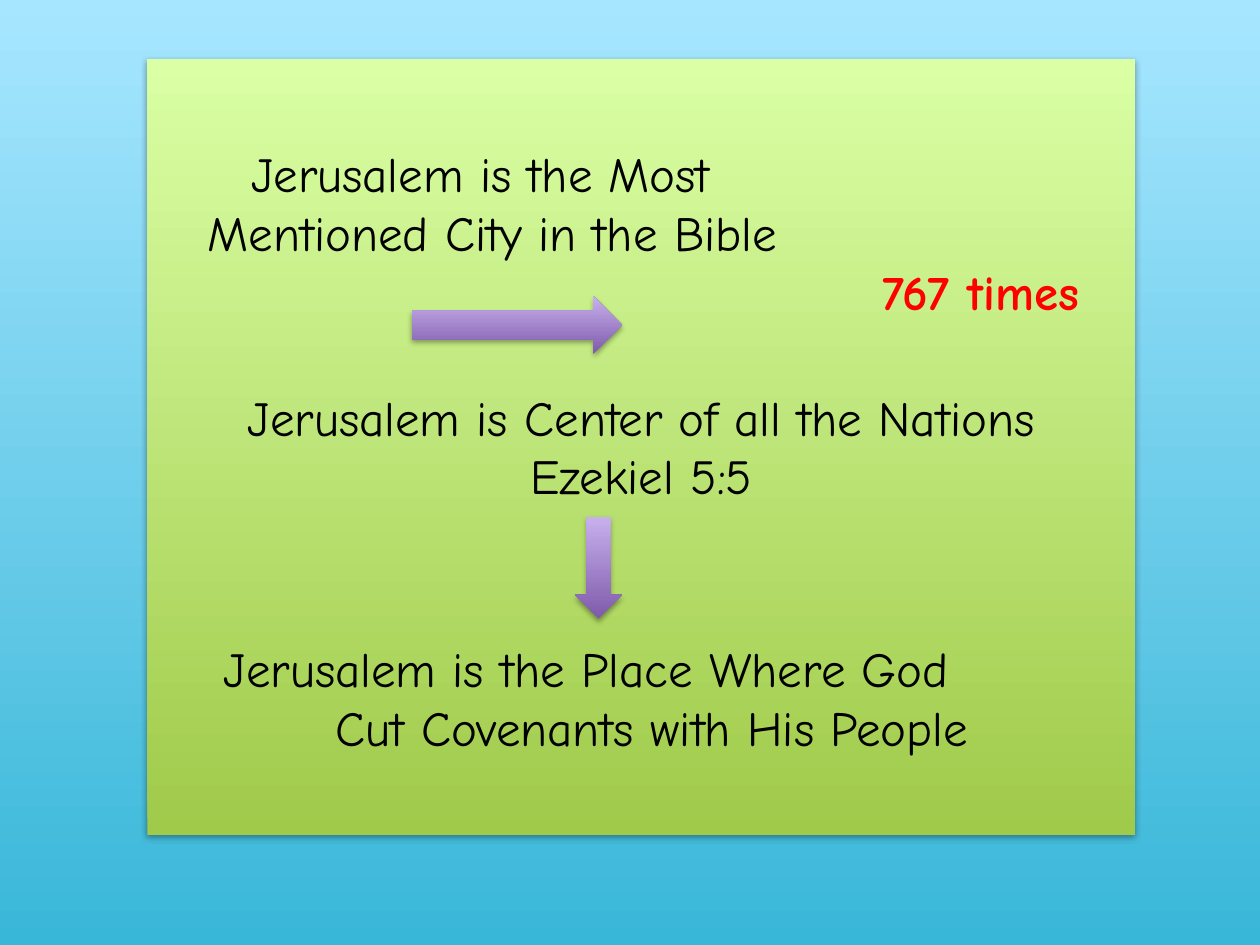
from dataclasses import dataclass

from lxml.etree import SubElement
from pptx import Presentation
from pptx.dml.color import RGBColor
from pptx.enum.shapes import MSO_SHAPE as Preset
from pptx.enum.text import MSO_ANCHOR as Anchor, PP_ALIGN as Align
from pptx.oxml.ns import qn
from pptx.shapes.autoshape import Shape
from pptx.slide import Slide
from pptx.text.text import TextFrame
from pptx.util import Pt


@dataclass(frozen=True)
class Theme:
    sky: tuple[str, str] = ("39B7D8", "A7E6FF")
    meadow: tuple[str, str] = ("A0CA4A", "DAFFA5")
    violet: tuple[str, str] = ("7F5BAB", "C8B0ED")
    ink: str = "000000"
    accent: str = "FF0000"
    shadow: str = "000000"
    font: str = "Comic Neue"
    size: float = 28


@dataclass(frozen=True)
class Block:
    preset: Preset
    left: float
    top: float
    width: float
    height: float
    gradient: tuple[str, str]


@dataclass(frozen=True)
class Line:
    words: str
    indent: float = 0
    gap: float = 0
    centered: bool = False
    stressed: bool = False


THEME = Theme()
GAP = 38.2
SPACE = 9.15

SKY = Block(Preset.RECTANGLE, 0, 0, 720, 540, THEME.sky)
PANEL = Block(Preset.RECTANGLE, 84.2, 33.8, 564.5, 443.5, THEME.meadow)
ARROWS = [
    Block(Preset.DOWN_ARROW, 328.3, 295.2, 27.4, 58.3, THEME.violet),
    Block(Preset.RIGHT_ARROW, 235.4, 169.2, 120.2, 33.1, THEME.violet),
]
LINES = [
    Line("Jerusalem is the Most", indent=52.3),
    Line("Mentioned City in the Bible", indent=3 * SPACE),
    Line("767 times", indent=413, stressed=True),
    Line("Jerusalem is Center of all the Nations", gap=GAP, centered=True),
    Line("Ezekiel 5:5", centered=True),
    Line("Jerusalem is the Place Where God", indent=4 * SPACE, gap=2 * GAP),
    Line("Cut Covenants with His People", indent=11 * SPACE),
]


def add_shadow(shape: Shape) -> None:
    shape.shadow.inherit = False
    effects = shape._element.spPr.find(qn("a:effectLst"))
    outer = SubElement(
        effects, qn("a:outerShdw"), blurRad=str(Pt(3.1)), dist=str(Pt(1.8)),
        dir="5400000", rotWithShape="0",
    )
    color = SubElement(outer, qn("a:srgbClr"), val=THEME.shadow)
    SubElement(color, qn("a:alpha"), val="35000")


def draw_block(slide: Slide, block: Block) -> Shape:
    shape = slide.shapes.add_shape(
        block.preset, Pt(block.left), Pt(block.top), Pt(block.width), Pt(block.height)
    )
    shape.fill.gradient()
    shape.fill.gradient_angle = 90
    for stop, position, color in zip(shape.fill.gradient_stops, (0, 1), block.gradient):
        stop.position = position
        stop.color.rgb = RGBColor.from_string(color)
    shape.line.fill.background()
    add_shadow(shape)
    return shape


def write_lines(frame: TextFrame, lines: list[Line]) -> None:
    frame.word_wrap = True
    frame.vertical_anchor = Anchor.TOP
    frame.margin_top = Pt(48.4)
    frame.margin_left = frame.margin_right = Pt(7.2)
    frame.text = "\n".join(line.words for line in lines)
    for index, (paragraph, line) in enumerate(zip(frame.paragraphs, lines)):
        paragraph.alignment = Align.CENTER if line.centered else Align.LEFT
        if index:
            paragraph.space_before = Pt(line.gap)
        properties = paragraph._p.get_or_add_pPr()
        properties.set("marL", str(Pt(line.indent)))
        properties.set("indent", "0")
        for run in paragraph.runs:
            run.font.name = THEME.font
            run.font.size = Pt(THEME.size)
            run.font.bold = line.stressed
            color = THEME.accent if line.stressed else THEME.ink
            run.font.color.rgb = RGBColor.from_string(color)


def main() -> None:
    deck = Presentation()
    deck.slide_width, deck.slide_height = Pt(720), Pt(540)
    slide = deck.slides.add_slide(deck.slide_layouts[6])
    draw_block(slide, SKY)
    panel = draw_block(slide, PANEL)
    write_lines(panel.text_frame, LINES)
    for arrow in ARROWS:
        draw_block(slide, arrow)
    deck.save("out.pptx")


if __name__ == "__main__":
    main()
